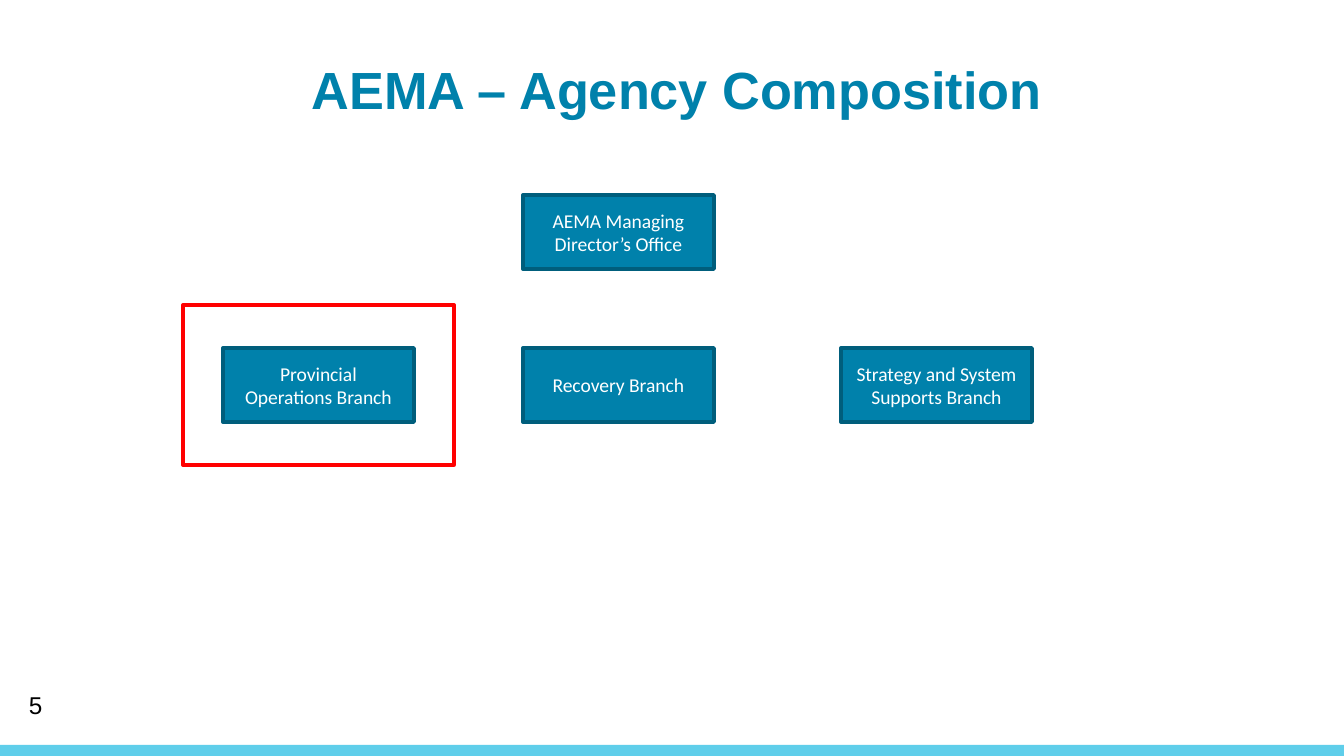
from dataclasses import dataclass

from pptx import Presentation
from pptx.dml.color import RGBColor
from pptx.enum.shapes import MSO_SHAPE
from pptx.enum.text import MSO_ANCHOR, PP_ALIGN
from pptx.util import Emu, Pt

TITLE = "AEMA – Agency Composition"
PAGE_NUMBER = "5"
# (text, column, row)
OFFICES = [
    ("AEMA Managing Director’s Office", 1, 0),
    ("Recovery Branch", 1, 1),
    ("Provincial Operations Branch", 0, 1),
    ("Strategy and System Supports Branch", 2, 1),
]
HIGHLIGHTED = (0, 1)

SLIDE_W, SLIDE_H = 1344, 756
COLUMN_LEFTS = (223, 523, 841)
ROW_TOPS = (195, 348)
BOX_W, BOX_H = 191, 74
FRAME_PAD_X, FRAME_PAD_Y = 40, 43
BAR_H = 11
INSET_X, INSET_Y = 13, 7


@dataclass(frozen=True)
class Theme:
    blue: str = "0081AB"
    outline: str = "005E7C"
    bar: str = "5FCEEA"
    highlight: str = "FF0000"
    white: str = "FFFFFF"
    black: str = "000000"
    heading_font: str = "Arial"
    box_font: str = "Calibri"
    title_size: float = 28
    page_size: float = 13
    box_size: float = 10.5
    line_width: float = 2


THEME = Theme()


def px(length):
    return Emu(round(length * 914400 / 134.4))


def write(shape, text, *, size, color, font=THEME.heading_font, bold=False,
          align=PP_ALIGN.LEFT, anchor=MSO_ANCHOR.MIDDLE, inset_left=INSET_X):
    frame = shape.text_frame
    frame.word_wrap = True
    frame.vertical_anchor = anchor
    frame.margin_left, frame.margin_right = px(inset_left), px(INSET_X)
    frame.margin_top = frame.margin_bottom = px(INSET_Y)
    paragraph = frame.paragraphs[0]
    paragraph.alignment = align
    run = paragraph.add_run()
    run.text = text
    run.font.name, run.font.size, run.font.bold = font, Pt(size), bold
    run.font.color.rgb = RGBColor.from_string(color)


def add_rectangle(slide, left, top, width, height, fill=None, line=None):
    rectangle = slide.shapes.add_shape(
        MSO_SHAPE.RECTANGLE, px(left), px(top), px(width), px(height))
    rectangle.shadow.inherit = False
    if fill:
        rectangle.fill.solid()
        rectangle.fill.fore_color.rgb = RGBColor.from_string(fill)
    else:
        rectangle.fill.background()
    if line:
        rectangle.line.color.rgb = RGBColor.from_string(line)
        rectangle.line.width = Pt(THEME.line_width)
    else:
        rectangle.line.fill.background()
    return rectangle


def main():
    presentation = Presentation()
    presentation.slide_width, presentation.slide_height = px(SLIDE_W), px(SLIDE_H)
    slide = presentation.slides.add_slide(presentation.slide_layouts[6])

    add_rectangle(slide, 0, SLIDE_H - BAR_H, SLIDE_W, BAR_H, fill=THEME.bar)

    title = slide.shapes.add_textbox(px(79), px(50), px(1208), px(77))
    write(title, TITLE, size=THEME.title_size, color=THEME.blue, bold=True,
          align=PP_ALIGN.CENTER, anchor=MSO_ANCHOR.TOP, inset_left=0)
    page_number = slide.shapes.add_textbox(px(16), px(685), px(302), px(40))
    write(page_number, PAGE_NUMBER, size=THEME.page_size, color=THEME.black)

    for name, column, row in OFFICES:
        office = add_rectangle(slide, COLUMN_LEFTS[column], ROW_TOPS[row],
                               BOX_W, BOX_H, THEME.blue, THEME.outline)
        write(office, name, size=THEME.box_size, color=THEME.white,
              font=THEME.box_font, align=PP_ALIGN.CENTER)

    column, row = HIGHLIGHTED
    add_rectangle(slide, COLUMN_LEFTS[column] - FRAME_PAD_X,
                  ROW_TOPS[row] - FRAME_PAD_Y, BOX_W + 2 * FRAME_PAD_X,
                  BOX_H + 2 * FRAME_PAD_Y, line=THEME.highlight)

    presentation.save("out.pptx")


if __name__ == "__main__":
    main()
